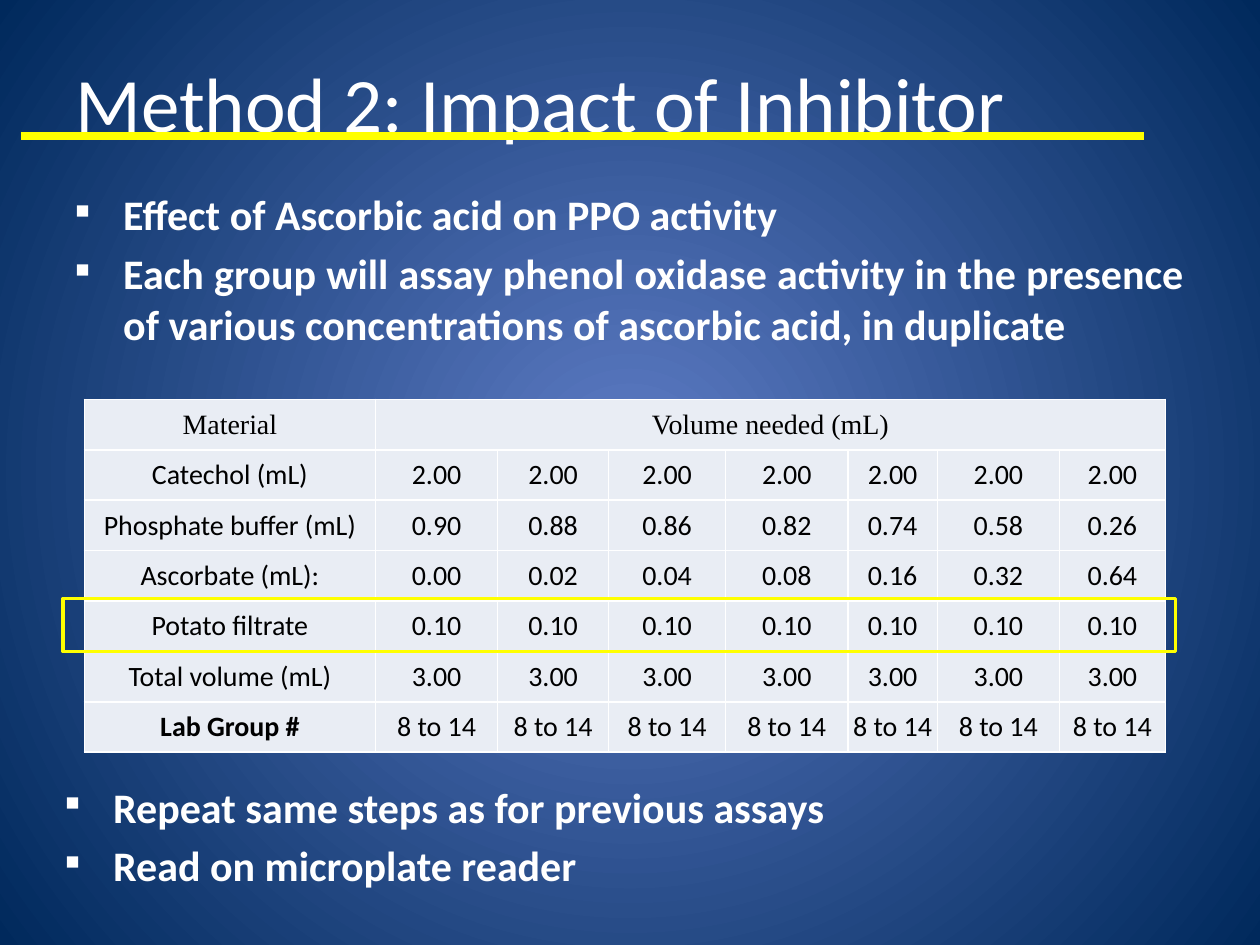
from dataclasses import dataclass

from pptx import Presentation
from pptx.dml.color import RGBColor as RGB
from pptx.enum.shapes import MSO_CONNECTOR as CONNECTOR, MSO_SHAPE as SHAPE
from pptx.enum.text import MSO_ANCHOR as ANCHOR, PP_ALIGN as ALIGN
from pptx.oxml import parse_xml
from pptx.oxml.ns import nsdecls, qn
from pptx.util import Inches, Pt


@dataclass(frozen=True)
class Theme:
    """Colours, fonts and type sizes of the slide."""
    white: str = "FFFFFF"
    black: str = "000000"
    accent: str = "FFFF00"
    cell: str = "E9EDF4"
    glow: str = "5E7CC5"
    edge: str = "00295C"
    font: str = "Calibri"
    header_font: str = "Times New Roman"
    title: int = 44
    body: int = 24
    table: int = 16


T = Theme()
COLS = [2.31, 0.97, 0.88, 0.93, 0.97, 0.71, 0.97, 0.84]
ROW_H = 0.4
ASCORBATE = [0, 0.02, 0.04, 0.08, 0.16, 0.32, 0.64]


def xml(tag, attrs="", inner=""):
    """Return a DrawingML element."""
    return parse_xml(f"<a:{tag} {nsdecls('a')} {attrs}>{inner}</a:{tag}>")


def solid(color):
    """Return the markup of a solid fill."""
    return f'<a:solidFill><a:srgbClr val="{color}"/></a:solidFill>'


def style_runs(p, size, color, font=T.font, bold=False):
    """Format every run of a paragraph."""
    for r in p.runs:
        r.font.size = Pt(size)
        r.font.name = font
        r.font.bold = bold
        r.font.color.rgb = RGB.from_string(color)


def set_background(s):
    """Fill the background with a circular gradient."""
    fill = s.background.fill
    fill.gradient()
    for stop, color in zip(fill.gradient_stops, (T.glow, T.edge)):
        stop.color.rgb = RGB.from_string(color)
    grad = s.background._cSld.find(".//" + qn("a:gradFill"))
    focus = '<a:fillToRect l="50000" t="50000" r="50000" b="50000"/>'
    grad.replace(grad.find(qn("a:lin")), xml("path", 'path="circle"', focus))


def add_text(s, x, y, w, h):
    """Add a wrapping text box and return its frame."""
    tf = s.shapes.add_textbox(Inches(x), Inches(y), Inches(w), Inches(h)).text_frame
    tf.word_wrap = True
    return tf


def add_title(s, text):
    """Add the slide title."""
    tf = add_text(s, 0.5, 0.18, 9, 1.25)
    tf.vertical_anchor = ANCHOR.MIDDLE
    tf.text = text
    style_runs(tf.paragraphs[0], T.title, T.white)


def add_bullets(s, x, y, lines):
    """Add bold, justified lines with square bullets."""
    tf = add_text(s, x, y, 9, 1.55)
    tf.text = "\n".join(lines)
    for p in tf.paragraphs:
        p.alignment = ALIGN.JUSTIFY
        p.level = 1
        style_runs(p, T.body, T.white, bold=True)
        pPr = p._p.get_or_add_pPr()
        pPr.set("marL", str(Inches(0.38)))
        pPr.set("indent", str(Inches(-0.38)))
        pPr.append(xml("spcBef", inner='<a:spcPct val="20000"/>'))
        pPr.append(xml("buClr", inner=f'<a:srgbClr val="{T.white}"/>'))
        pPr.append(xml("buSzPct", 'val="46000"'))
        pPr.append(xml("buChar", 'char="■"'))


def style_cell(cell, font, bold):
    """Centre a cell and set its borders, fill and type."""
    cell.margin_left = cell.margin_right = cell.margin_top = cell.margin_bottom = 0
    cell.vertical_anchor = ANCHOR.MIDDLE
    tcPr = cell._tc.get_or_add_tcPr()
    for side in "LRTB":
        tcPr.append(xml(f"ln{side}", f'w="{Pt(1)}"', solid(T.white)))
    cell.fill.solid()
    cell.fill.fore_color.rgb = RGB.from_string(T.cell)
    p = cell.text_frame.paragraphs[0]
    p.alignment = ALIGN.CENTER
    style_runs(p, T.table, T.black, font, bold)


def add_volumes(s, rows):
    """Add the table of volumes under a merged heading."""
    table = s.shapes.add_table(len(rows), len(COLS), Inches(0.67), Inches(3.17),
                               Inches(sum(COLS)), Inches(ROW_H * len(rows))).table
    for col, width in zip(table.columns, COLS):
        col.width = Inches(width)
    for i, (label, values) in enumerate(rows):
        table.rows[i].height = Inches(ROW_H)
        for j, text in enumerate([label, *values]):
            table.cell(i, j).text = text
    table.cell(0, 1).merge(table.cell(0, len(COLS) - 1))
    last = len(rows) - 1
    for i in range(len(rows)):
        for j in range(len(COLS)):
            style_cell(table.cell(i, j), T.font if i else T.header_font,
                       i == last and j == 0)


def add_rule(s, x1, x2, y):
    """Add the thick horizontal line under the title."""
    line = s.shapes.add_connector(CONNECTOR.STRAIGHT, Inches(x1), Inches(y),
                                  Inches(x2), Inches(y))
    line.line.color.rgb = RGB.from_string(T.accent)
    line.line.width = Pt(4.5)
    line._element.spPr.append(xml("effectLst"))


def add_highlight(s, x, y, w, h):
    """Add an unfilled frame around a table row."""
    sp = s.shapes.add_shape(SHAPE.RECTANGLE, Inches(x), Inches(y), Inches(w), Inches(h))
    sp.shadow.inherit = False
    sp.fill.background()
    sp.line.color.rgb = RGB.from_string(T.accent)
    sp.line.width = Pt(2)


def main():
    """Build and save the slide."""
    prs = Presentation()
    prs.slide_width, prs.slide_height = Inches(10), Inches(7.5)
    s = prs.slides.add_slide(prs.slide_layouts[6])
    n = len(ASCORBATE)
    set_background(s)
    add_title(s, "Method 2: Impact of Inhibitor")
    add_bullets(s, 0.5, 1.45, [
        "Effect of Ascorbic acid on PPO activity",
        "Each group will assay phenol oxidase activity in the presence "
        "of various concentrations of ascorbic acid, in duplicate"])
    add_rule(s, 0.17, 9.08, 1.08)
    add_volumes(s, [
        ("Material", ["Volume needed (mL)"]),
        ("Catechol (mL)", ["2.00"] * n),
        ("Phosphate buffer (mL)", [f"{0.9 - v:.2f}" for v in ASCORBATE]),
        ("Ascorbate (mL):", [f"{v:.2f}" for v in ASCORBATE]),
        ("Potato filtrate", ["0.10"] * n),
        ("Total volume (mL)", ["3.00"] * n),
        ("Lab Group #", ["8 to 14"] * n)])
    add_highlight(s, 0.5, 4.75, 8.83, 0.42)
    add_bullets(s, 0.42, 6.15, ["Repeat same steps as for previous assays",
                                "Read on microplate reader"])
    prs.save("out.pptx")


if __name__ == "__main__":
    main()
